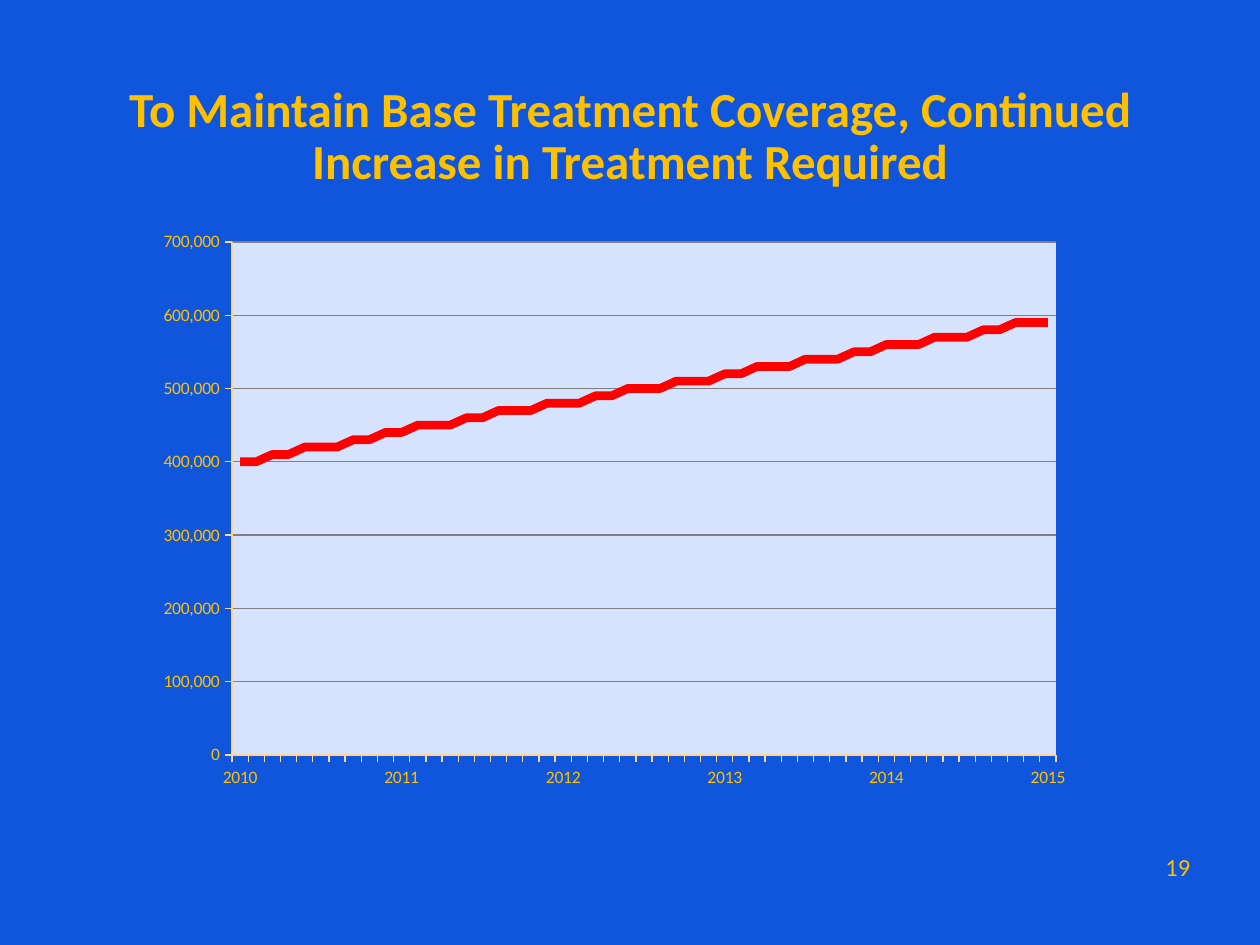
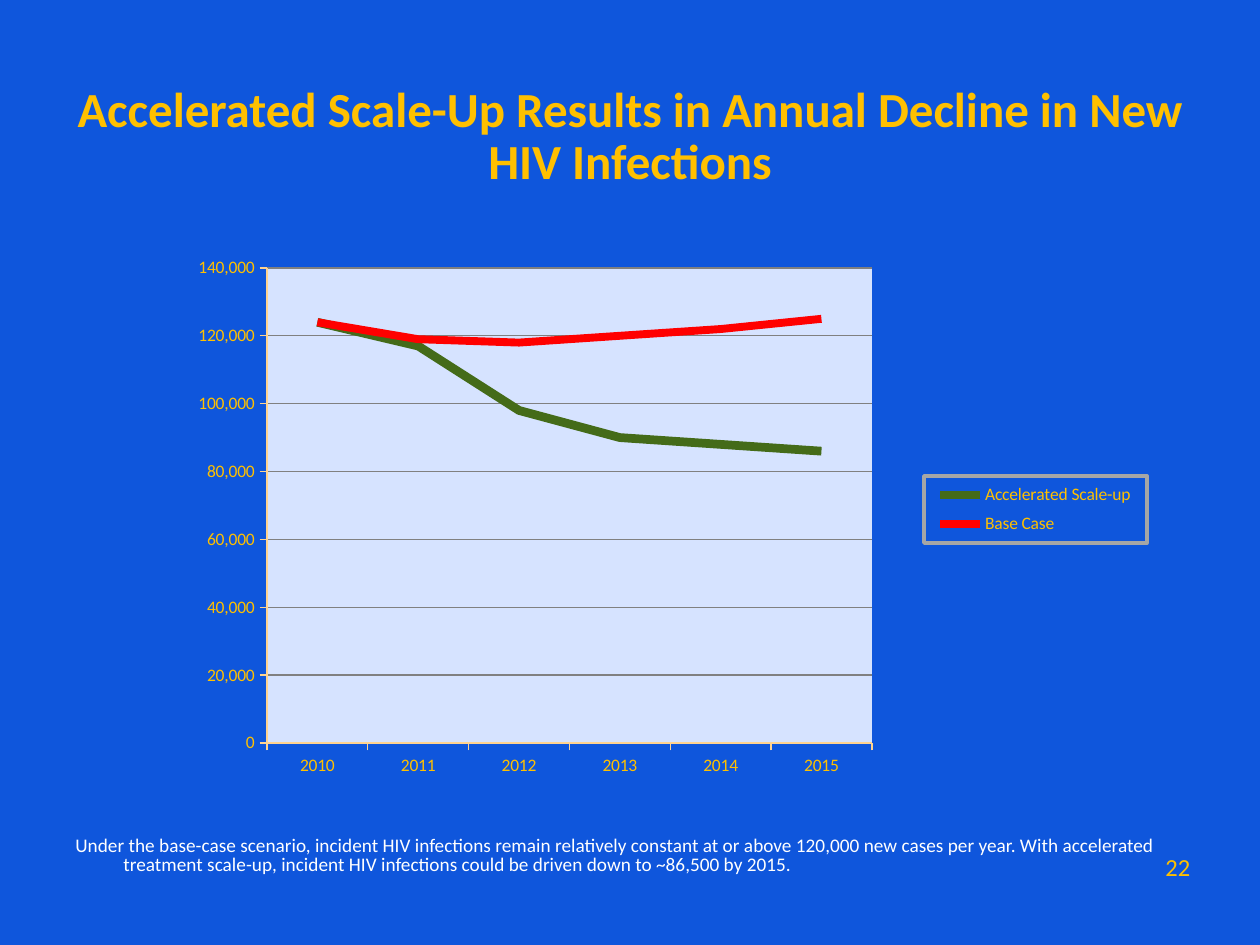
from dataclasses import dataclass
from itertools import pairwise

from lxml import etree
from pptx import Presentation
from pptx.chart.data import CategoryChartData
from pptx.dml.color import RGBColor
from pptx.enum.chart import XL_CHART_TYPE as ChartType
from pptx.enum.chart import XL_LEGEND_POSITION as LegendPosition
from pptx.enum.chart import XL_MARKER_STYLE as Marker
from pptx.enum.chart import XL_TICK_MARK as TickMark
from pptx.enum.text import MSO_ANCHOR as Anchor
from pptx.enum.text import PP_ALIGN as Align
from pptx.oxml import parse_xml
from pptx.oxml.ns import nsdecls, qn
from pptx.util import Emu, Pt

# Shared style
PX_PER_INCH = 126
FONT = "Calibri"
BLUE, GOLD, WHITE = "0F56DC", "FFC000", "FFFFFF"
PALE_BLUE, GRID_GRAY, AXIS_SAND = "D6E3FF", "808080", "FFD390"
LEGEND_GRAY, RED, GREEN = "A6A6A6", "FF0000", "446B19"


@dataclass(frozen=True)
class Box:
    left: int
    top: int
    width: int
    height: int

    def emu(self) -> tuple[Emu, ...]:
        return tuple(px(n) for n in (self.left, self.top, self.width, self.height))

    def share_of(self, outer: "Box") -> dict[str, float]:
        """Position and size as fractions of the outer box."""
        return {
            "x": (self.left - outer.left) / outer.width,
            "y": (self.top - outer.top) / outer.height,
            "w": self.width / outer.width,
            "h": self.height / outer.height,
        }


@dataclass(frozen=True)
class TextStyle:
    size: int
    color: str
    bold: bool = False
    align: Align = Align.LEFT
    anchor: Anchor = Anchor.TOP
    leading: int | None = None
    hanging: int = 0


@dataclass(frozen=True)
class Trend:
    name: str
    values: list[int]
    color: str
    weight: float = 5


@dataclass(frozen=True)
class TrendSlide:
    title: str
    number: str
    chart: Box
    plot: Box
    categories: list[str]
    trends: list[Trend]
    legend: Box | None = None
    note: str = ""


TITLE_BOX = Box(63, 38, 1134, 158)
NUMBER_BOX = Box(1153, 846, 81, 43)
NOTE_BOX = Box(63, 798, 1134, 84)
TITLE = TextStyle(28, GOLD, bold=True, align=Align.CENTER, anchor=Anchor.BOTTOM, leading=30)
NUMBER = TextStyle(14, GOLD)
NOTE = TextStyle(11, WHITE, anchor=Anchor.BOTTOM, leading=11, hanging=48)


def px(length: int) -> Emu:
    return Emu(round(length * 914400 / PX_PER_INCH))


def rgb(color: str) -> RGBColor:
    return RGBColor.from_string(color)


def add_text(slide, box: Box, text: str, style: TextStyle) -> None:
    frame = slide.shapes.add_textbox(*box.emu()).text_frame
    frame.word_wrap = True
    frame.vertical_anchor = style.anchor
    paragraph = frame.paragraphs[0]
    paragraph.alignment = style.align
    if style.leading:
        paragraph.line_spacing = Pt(style.leading)
    if style.hanging:
        properties = paragraph._p.get_or_add_pPr()
        properties.set("marL", str(px(style.hanging)))
        properties.set("indent", str(-px(style.hanging)))
    run = paragraph.add_run()
    run.text = text
    run.font.name, run.font.size, run.font.bold = FONT, Pt(style.size), style.bold
    run.font.color.rgb = rgb(style.color)


def style_line(line, color: str, weight: float) -> None:
    line.color.rgb = rgb(color)
    line.width = Pt(weight)


# Chart parts that need XML
def place(part, inner: Box, outer: Box, is_plot: bool) -> None:
    for old in part.findall(qn("c:layout")):
        part.remove(old)
    layout = parse_xml(f"<c:layout {nsdecls('c')}><c:manualLayout/></c:layout>")
    settings = {"layoutTarget": "inner"} if is_plot else {}
    settings |= {"xMode": "edge", "yMode": "edge"}
    settings |= {key: f"{share:.4f}" for key, share in inner.share_of(outer).items()}
    for tag, value in settings.items():
        etree.SubElement(layout[0], qn(f"c:{tag}")).set("val", value)
    before = part.find(qn("c:legendPos"))
    part.insert(0 if before is None else part.index(before) + 1, layout)


def shape_properties(fill: str, line: str = "") -> etree._Element:
    return parse_xml(f"<c:spPr {nsdecls('c', 'a')}>{fill}{line}</c:spPr>")


def solid(color: str) -> str:
    return f'<a:solidFill><a:srgbClr val="{color}"/></a:solidFill>'


def add_legend(chart, box: Box, outer: Box) -> None:
    chart.has_legend = True
    legend = chart.legend
    legend.position = LegendPosition.RIGHT
    legend.include_in_layout = False
    place(legend._element, box, outer, is_plot=False)
    border = f'<a:ln w="{Pt(2)}">{solid(LEGEND_GRAY)}</a:ln>'
    overlay = legend._element.find(qn("c:overlay"))
    overlay.addnext(shape_properties("<a:noFill/>", border))


def add_trend_chart(slide, content: TrendSlide) -> None:
    data = CategoryChartData(number_format="#,##0")
    data.categories = content.categories
    for trend in content.trends:
        data.add_series(trend.name, trend.values)
    chart = slide.shapes.add_chart(ChartType.LINE, *content.chart.emu(), data).chart
    chart.has_title = False
    chart.has_legend = False
    chart.font.name, chart.font.size = FONT, Pt(10)
    chart.font.color.rgb = rgb(GOLD)

    # Lines
    plot = chart.plots[0]
    plot.vary_by_categories = False
    for series, trend in zip(plot.series, content.trends):
        series.smooth = False
        series.marker.style = Marker.NONE
        style_line(series.format.line, trend.color, trend.weight)

    # Axes and grid
    for axis in (chart.category_axis, chart.value_axis):
        axis.major_tick_mark = TickMark.OUTSIDE
        axis.minor_tick_mark = TickMark.NONE
        style_line(axis.format.line, AXIS_SAND, 0.75)
    values = chart.value_axis
    values.minimum_scale = 0
    values.has_major_gridlines = True
    style_line(values.major_gridlines.format.line, GRID_GRAY, 0.75)
    values.tick_labels.number_format = "#,##0"
    values.tick_labels.number_format_is_linked = False

    # Plot area and legend
    area = chart._chartSpace.find(f".//{qn('c:plotArea')}")
    place(area, content.plot, content.chart, is_plot=True)
    area.append(shape_properties(solid(PALE_BLUE)))
    if content.legend:
        add_legend(chart, content.legend, content.chart)


def add_trend_slide(deck, content: TrendSlide) -> None:
    slide = deck.slides.add_slide(deck.slide_layouts[6])
    slide.background.fill.solid()
    slide.background.fill.fore_color.rgb = rgb(BLUE)
    add_text(slide, NUMBER_BOX, content.number, NUMBER)
    add_text(slide, TITLE_BOX, content.title, TITLE)
    if content.note:
        add_text(slide, NOTE_BOX, content.note, NOTE)
    add_trend_chart(slide, content)


def interpolate(knots: dict[int, int]) -> list[int]:
    """Fill in straight steps between knots, to the nearest ten thousand."""
    filled = []
    for (start, low), (end, high) in pairwise(knots.items()):
        steps = end - start
        filled += [low + (high - low) * i / steps for i in range(steps)]
    filled.append(list(knots.values())[-1])
    return [int(round(value, -4)) for value in filled]


# Content
YEARS = [str(year) for year in range(2010, 2016)]
STEPS_PER_YEAR = 10
STEP_LABELS = [
    YEARS[step // STEPS_PER_YEAR] if step % STEPS_PER_YEAR == 0 else ""
    for step in range((len(YEARS) - 1) * STEPS_PER_YEAR + 1)
]
TREATMENT = interpolate({
    0: 397000, 1: 404000, 2: 409000, 3: 412000, 4: 416000,
    11: 447000, 20: 481000, 30: 517500, 50: 594000,
})

SLIDES = [
    TrendSlide(
        title="To Maintain Base Treatment Coverage, Continued Increase in Treatment Required",
        number="19",
        chart=Box(145, 220, 940, 577),
        plot=Box(232, 242, 824, 513),
        categories=STEP_LABELS,
        trends=[Trend("Series 1", TREATMENT, RED)],
    ),
    TrendSlide(
        title="Accelerated Scale-Up Results in Annual Decline in New HIV Infections",
        number="22",
        chart=Box(63, 220, 1134, 577),
        plot=Box(267, 268, 605, 475),
        categories=YEARS,
        trends=[
            Trend("Accelerated Scale-up", [124000, 117000, 98000, 90000, 88000, 86000], GREEN),
            Trend("Base Case", [124000, 119000, 118000, 120000, 122000, 125000], RED, 4.5),
        ],
        legend=Box(924, 476, 223, 67),
        note="Under the base-case scenario, incident HIV infections remain relatively constant "
        "at or above 120,000 new cases per year. With accelerated treatment scale-up, "
        "incident HIV infections could be driven down to ~86,500 by 2015.",
    ),
]


def main() -> None:
    deck = Presentation()
    deck.slide_width, deck.slide_height = px(1260), px(945)
    for content in SLIDES:
        add_trend_slide(deck, content)
    deck.save("out.pptx")


if __name__ == "__main__":
    main()
